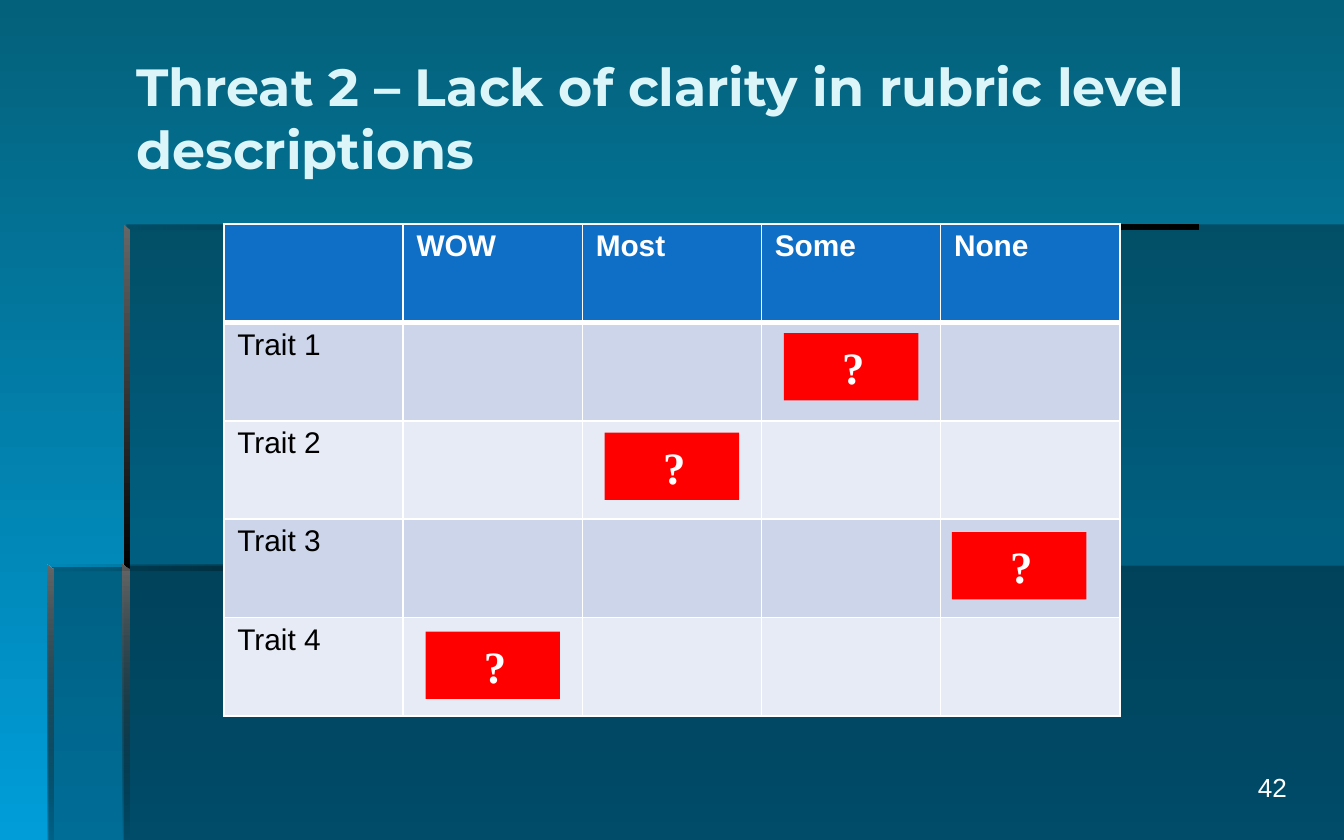
import dataclasses
import typing

import lxml.etree
import pptx
import pptx.dml.color
import pptx.enum.shapes
import pptx.enum.text
import pptx.oxml.ns
import pptx.util

Pt = pptx.util.Pt
qn = pptx.oxml.ns.qn


@dataclasses.dataclass(frozen=True)
class Theme:
    background_top: str = "04617B"
    background_bottom: str = "009DD9"
    black: str = "000000"
    edge: str = "666666"
    title: str = "DBF5F9"
    white: str = "FFFFFF"
    header: str = "0F6FC6"
    bands: tuple[str, str] = ("CCD5EA", "E7EBF5")
    marker: str = "FF0000"
    title_font: str = "Montserrat"
    body_font: str = "Arial"
    marker_font: str = "Times New Roman"
    title_size: float = 28
    marker_size: float = 24
    table_size: float = 16
    number_size: float = 14


class Stop(typing.NamedTuple):
    color: str
    opacity: int = 100


class Panel(typing.NamedTuple):
    """An outline filled with one colour, or with a gradient of two."""
    points: list[tuple[float, float]]
    stops: list[Stop]
    angle: int = 0


class Box(typing.NamedTuple):
    left: float
    top: float
    width: float
    height: float


class Marker(typing.NamedTuple):
    row: int
    left: float


THEME = Theme()
WIDTH, HEIGHT = 720, 450
DOWN = 270  # python-pptx measures gradient angles counter-clockwise

# Lines of the backdrop: two nested frames, each with a bevelled left edge
OUTER_X, INNER_X = 25.2, 66.2
OUTER_Y, INNER_Y = 302.4, 120.2
BEVEL, RULE = 3.5, 3

TABLE = Box(120, 120, 480, 263.5)
ROWS = [
    ["", "WOW", "Most", "Some", "None"],
    *([f"Trait {number}", "", "", "", ""] for number in range(1, 5)),
]
MARKERS = [Marker(0, 420), Marker(1, 324), Marker(2, 510), Marker(3, 228)]
MARKER_TOP, MARKER_STEP = 178.5, 53.3


def rgb(color: str) -> pptx.dml.color.RGBColor:
    return pptx.dml.color.RGBColor.from_string(color)


def rectangle(left: float, top: float, right: float, bottom: float) -> list[tuple[float, float]]:
    return [(left, top), (left, bottom), (right, bottom), (right, top)]


def bevel(left: float, top: float, bottom: float) -> list[tuple[float, float]]:
    """A narrow upright strip whose top edge slopes down to the right."""
    return [(left, top), (left, bottom), (left + BEVEL, bottom), (left + BEVEL, top + RULE)]


def fill_gradient(fill, stops: list[Stop], angle: int) -> None:
    fill.gradient()
    fill.gradient_angle = angle
    for gradient_stop, stop in zip(fill.gradient_stops, stops):
        gradient_stop.color.rgb = rgb(stop.color)


def draw_panel(slide, panel: Panel) -> None:
    start, *others = [(Pt(x), Pt(y)) for x, y in panel.points]
    builder = slide.shapes.build_freeform(*start)
    builder.add_line_segments(others, close=True)
    shape = builder.convert_to_shape()
    shape.shadow.inherit = False
    if len(panel.stops) == 1:
        shape.fill.solid()
        shape.fill.fore_color.rgb = rgb(panel.stops[0].color)
    else:
        fill_gradient(shape.fill, panel.stops, panel.angle)
    for color, stop in zip(shape.element.spPr.iter(qn("a:srgbClr")), panel.stops):
        if stop.opacity < 100:
            lxml.etree.SubElement(color, qn("a:alpha"), val=str(stop.opacity * 1000))
    shape.line.fill.background()


def add_run(paragraph, text: str, font: str, size: float, color: str, bold: bool = False) -> None:
    run = paragraph.add_run()
    run.text = text
    run.font.name = font
    run.font.size = Pt(size)
    run.font.bold = bold
    run.font.color.rgb = rgb(color)


def add_text_box(slide, box: Box):
    text_frame = slide.shapes.add_textbox(*map(Pt, box)).text_frame
    text_frame.word_wrap = True
    return text_frame


def set_borders(cell, widths: dict[str, float]) -> None:
    """Draw solid white borders; they must precede the fill in the cell properties."""
    properties = cell._tc.get_or_add_tcPr()
    for index, (side, width) in enumerate(widths.items()):
        line = lxml.etree.Element(qn(f"a:ln{side}"), w=str(Pt(width)))
        solid = lxml.etree.SubElement(line, qn("a:solidFill"))
        lxml.etree.SubElement(solid, qn("a:srgbClr"), val=THEME.white)
        properties.insert(index, line)


def draw_table(slide) -> None:
    table = slide.shapes.add_table(len(ROWS), len(ROWS[0]), *map(Pt, TABLE)).table
    for column in table.columns:
        column.width = Pt(TABLE.width / len(ROWS[0]))
    for row_index, texts in enumerate(ROWS):
        table.rows[row_index].height = Pt(TABLE.height / len(ROWS))
        is_header = row_index == 0
        for column_index, text in enumerate(texts):
            cell = table.cell(row_index, column_index)
            cell.margin_left = cell.margin_right = Pt(7.2)
            cell.margin_top = cell.margin_bottom = Pt(3.2)
            cell.fill.solid()
            cell.fill.fore_color.rgb = rgb(
                THEME.header if is_header else THEME.bands[(row_index - 1) % 2])
            set_borders(cell, {"L": 1, "R": 1, "T": 3 if row_index == 1 else 1,
                               "B": 3 if is_header else 1})
            if text:
                add_run(cell.text_frame.paragraphs[0], text, THEME.body_font, THEME.table_size,
                        THEME.white if is_header else THEME.black, is_header)


def draw_marker(slide, marker: Marker) -> None:
    box = Box(marker.left, MARKER_TOP + marker.row * MARKER_STEP, 72, 36)
    shape = slide.shapes.add_shape(
        pptx.enum.shapes.MSO_SHAPE.RECTANGLE, *map(Pt, box))
    shape.shadow.inherit = False
    shape.fill.solid()
    shape.fill.fore_color.rgb = rgb(THEME.marker)
    shape.line.fill.background()
    text_frame = shape.text_frame
    text_frame.margin_left = Pt(31.2)
    text_frame.vertical_anchor = pptx.enum.text.MSO_ANCHOR.TOP
    paragraph = text_frame.paragraphs[0]
    paragraph.alignment = pptx.enum.text.PP_ALIGN.LEFT
    add_run(paragraph, "?", THEME.marker_font, THEME.marker_size, THEME.white, True)


def draw_backdrop(slide) -> None:
    fill_gradient(slide.background.fill,
                  [Stop(THEME.background_top), Stop(THEME.background_bottom)], DOWN)
    shade = [Stop(THEME.black, 30)]
    fade_in = [Stop(THEME.black, 0), Stop(THEME.black)]
    edge = Stop(THEME.edge)
    stepped = [(67.7, OUTER_Y + 1.4), (25.9, OUTER_Y + 1.4), (25.9, HEIGHT),
               (WIDTH, HEIGHT), (WIDTH, INNER_Y), (67.7, INNER_Y)]
    for panel in [
        Panel(rectangle(INNER_X, OUTER_Y + 0.7, WIDTH, HEIGHT), shade),
        Panel(stepped, shade),
        Panel(rectangle(INNER_X, INNER_Y, 641.8, INNER_Y + RULE), fade_in),
        Panel(bevel(INNER_X, INNER_Y, 306), [edge, Stop(THEME.black)], DOWN),
        Panel(bevel(INNER_X - 0.5, OUTER_Y, HEIGHT), [edge, Stop(THEME.black, 0)], DOWN),
        Panel(rectangle(OUTER_X, OUTER_Y, 385.2, OUTER_Y + RULE), fade_in),
        Panel(bevel(OUTER_X, OUTER_Y, HEIGHT), [edge, Stop(THEME.black, 10)], DOWN),
    ]:
        draw_panel(slide, panel)


def main() -> None:
    presentation = pptx.Presentation()
    presentation.slide_width, presentation.slide_height = Pt(WIDTH), Pt(HEIGHT)
    slide = presentation.slides.add_slide(presentation.slide_layouts[6])
    draw_backdrop(slide)

    title = add_text_box(slide, Box(66, 16, 630, 93.6))
    title.vertical_anchor = pptx.enum.text.MSO_ANCHOR.MIDDLE
    add_run(title.paragraphs[0], "Threat 2 – Lack of clarity in rubric level descriptions",
            THEME.title_font, THEME.title_size, THEME.title, True)

    draw_table(slide)

    number = add_text_box(slide, Box(546.5, 409.7, 150, 31)).paragraphs[0]
    number.alignment = pptx.enum.text.PP_ALIGN.RIGHT
    add_run(number, "42", THEME.body_font, THEME.number_size, THEME.white)

    for marker in MARKERS:
        draw_marker(slide, marker)
    presentation.save("out.pptx")


if __name__ == "__main__":
    main()
